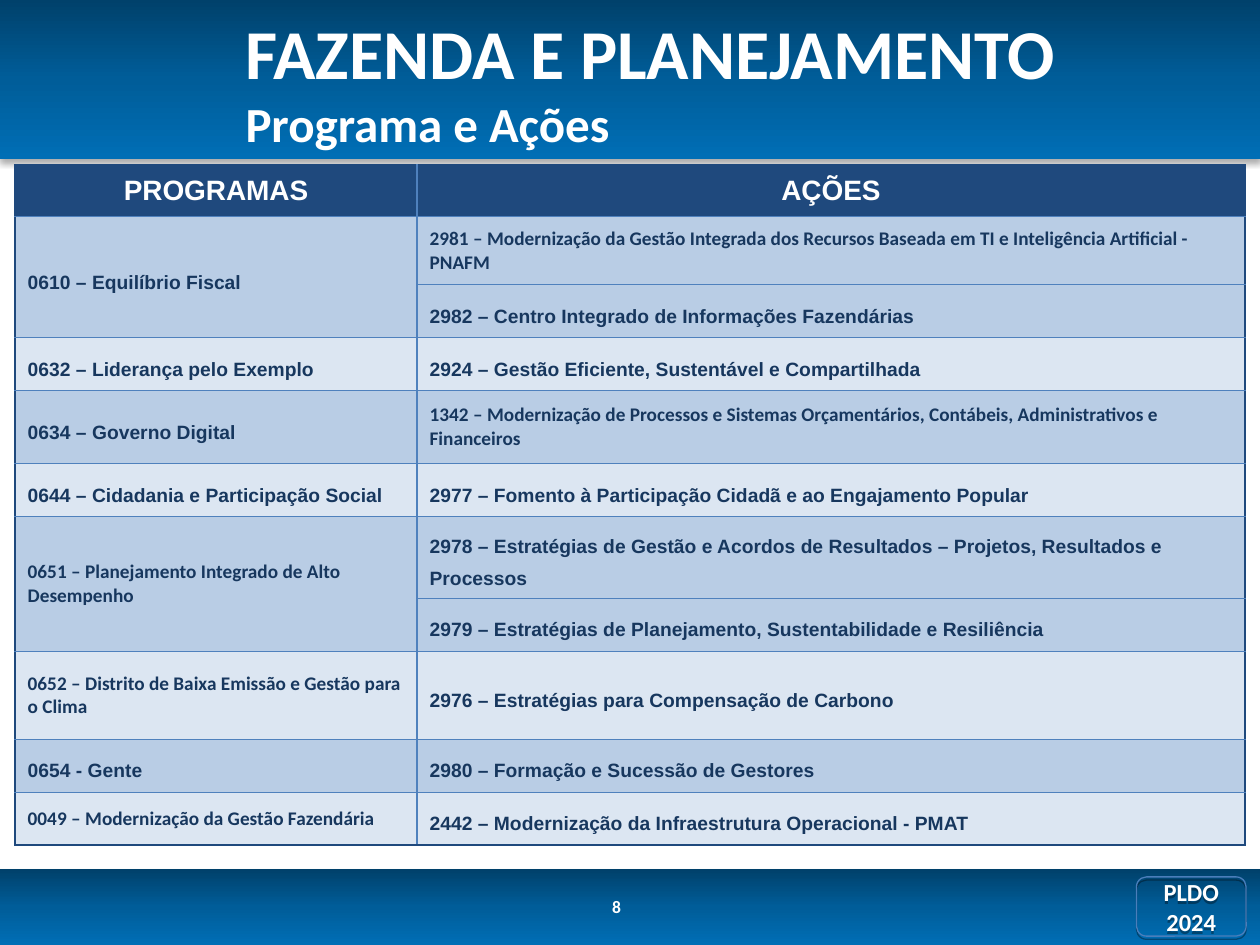
from dataclasses import dataclass

from pptx import Presentation
from pptx.dml.color import RGBColor
from pptx.enum.shapes import MSO_SHAPE as Preset
from pptx.enum.text import MSO_ANCHOR as Anchor, PP_ALIGN as Align
from pptx.oxml import parse_xml
from pptx.oxml.ns import nsdecls, qn
from pptx.util import Inches, Pt

NAVY, BLUE, INK, WHITE = "1F497D", "4F81BD", "17375E", "FFFFFF"
BANDS = ("B9CDE5", "DCE6F2")
BAND_GRADIENT = ((0, "00416B"), (50, "005D99"), (100, "006EB5"))
COLUMN_WIDTHS = (3.19, 6.57)
HEADER_HEIGHT = 0.41


@dataclass
class Entry:
    text: str
    compact: bool = False  # Calibri with single line spacing


@dataclass
class Action(Entry):
    height: float = 0.42


@dataclass
class Programme:
    title: Entry
    actions: tuple[Action, ...]


PROGRAMMES = (
    Programme(Entry("0610 – Equilíbrio Fiscal"), (
        Action("2981 – Modernização da Gestão Integrada dos Recursos Baseada em TI e "
               "Inteligência Artificial - PNAFM", True, 0.54),
        Action("2982 – Centro Integrado de Informações Fazendárias"))),
    Programme(Entry("0632 – Liderança pelo Exemplo"), (
        Action("2924 – Gestão Eficiente, Sustentável e Compartilhada"),)),
    Programme(Entry("0634 – Governo Digital"), (
        Action("1342 – Modernização de Processos e Sistemas Orçamentários, Contábeis, "
               "Administrativos e Financeiros", True, 0.58),)),
    Programme(Entry("0644 – Cidadania e Participação Social"), (
        Action("2977 – Fomento à Participação Cidadã e ao Engajamento Popular"),)),
    Programme(Entry("0651 – Planejamento Integrado de Alto Desempenho", True), (
        Action("2978 – Estratégias de Gestão e Acordos de Resultados – Projetos, "
               "Resultados e Processos"),
        Action("2979 – Estratégias de Planejamento, Sustentabilidade e Resiliência"))),
    Programme(Entry("0652 – Distrito de Baixa Emissão e Gestão para o Clima", True), (
        Action("2976 – Estratégias para Compensação de Carbono", height=0.7),)),
    Programme(Entry("0654 - Gente"), (
        Action("2980 – Formação e Sucessão de Gestores"),)),
    Programme(Entry("0049 – Modernização da Gestão Fazendária", True), (
        Action("2442 – Modernização da Infraestrutura Operacional - PMAT"),)),
)


def rgb(value: str) -> RGBColor:
    return RGBColor.from_string(value)


def style(paragraph, size: float, color: str = WHITE, font: str = "Calibri",
          align: Align = Align.LEFT) -> None:
    paragraph.alignment = align
    for run in paragraph.runs:
        run.font.name, run.font.size, run.font.bold = font, Pt(size), True
        run.font.color.rgb = rgb(color)


def add_shadow(shape, opacity: int, blur: float, distance: float) -> None:
    """Cast a black shadow straight down; call after fill and line are set."""
    shape.shadow.inherit = False
    shape._element.spPr.find(qn("a:effectLst")).append(parse_xml(
        f'<a:outerShdw {nsdecls("a")} blurRad="{Pt(blur)}" dist="{Pt(distance)}" '
        f'dir="5400000" rotWithShape="0"><a:srgbClr val="000000">'
        f'<a:alpha val="{opacity * 1000}"/></a:srgbClr></a:outerShdw>'))


def add_band(slide, top: float, height: float) -> None:
    band = slide.shapes.add_shape(Preset.RECTANGLE, 0, Inches(top), Inches(10), Inches(height))
    stops = "".join(f'<a:gs pos="{position * 1000}"><a:srgbClr val="{color}"/></a:gs>'
                    for position, color in BAND_GRADIENT)
    band.line.fill.background()
    properties = band._element.spPr
    properties.find(qn("a:prstGeom")).addnext(parse_xml(
        f'<a:gradFill {nsdecls("a")} rotWithShape="1"><a:gsLst>{stops}</a:gsLst>'
        f'<a:lin ang="5400000" scaled="0"/></a:gradFill>'))
    add_shadow(band, 32, 3.5, 2.2)


def add_text(slide, left: float, top: float, width: float, height: float,
             lines: tuple[tuple[str, float], ...], anchor: Anchor = Anchor.TOP) -> None:
    frame = slide.shapes.add_textbox(
        Inches(left), Inches(top), Inches(width), Inches(height)).text_frame
    frame.word_wrap, frame.vertical_anchor = True, anchor
    frame.text = "\n".join(text for text, _ in lines)
    for paragraph, (_, size) in zip(frame.paragraphs, lines):
        style(paragraph, size)


def add_badge(slide, text: str) -> None:
    badge = slide.shapes.add_shape(
        Preset.ROUNDED_RECTANGLE, Inches(9.02), Inches(6.96), Inches(0.87), Inches(0.47))
    badge.fill.background()
    badge.line.color.rgb, badge.line.width = rgb("4A7EBB"), Pt(0.75)
    add_shadow(badge, 35, 0, 1.8)
    frame = badge.text_frame
    frame.word_wrap, frame.vertical_anchor = True, Anchor.MIDDLE
    frame.text = text
    style(frame.paragraphs[0], 14, align=Align.CENTER)


def finish_cell(cell, fill: str, dark_sides: set[str]) -> None:
    """Set fill, margins and four borders, the outer ones in navy."""
    cell.vertical_anchor = Anchor.MIDDLE
    cell.margin_left = cell.margin_right = Inches(0.1)
    cell.margin_top = cell.margin_bottom = Inches(0.05)
    properties = cell._tc.get_or_add_tcPr()
    for side in "LRTB":
        properties.append(parse_xml(
            f'<a:ln{side} {nsdecls("a")} w="{Pt(1)}"><a:solidFill><a:srgbClr '
            f'val="{NAVY if side in dark_sides else BLUE}"/></a:solidFill></a:ln{side}>'))
    cell.fill.solid()
    cell.fill.fore_color.rgb = rgb(fill)


def write_entry(cell, entry: Entry, align: Align) -> None:
    cell.text = entry.text
    paragraph = cell.text_frame.paragraphs[0]
    if entry.compact:
        style(paragraph, 11, INK)
    else:
        paragraph.line_spacing = 1.5
        style(paragraph, 11, INK, "Arial", align)


def add_programme_table(slide) -> None:
    heights = [HEADER_HEIGHT] + [a.height for p in PROGRAMMES for a in p.actions]
    table = slide.shapes.add_table(
        len(heights), 2, Inches(0.12), Inches(1.31),
        Inches(sum(COLUMN_WIDTHS)), Inches(sum(heights))).table
    for column, width in zip(table.columns, COLUMN_WIDTHS):
        column.width = Inches(width)
    for row, height in zip(table.rows, heights):
        row.height = Inches(height)

    for column, heading in enumerate(("PROGRAMAS", "AÇÕES")):
        cell = table.cell(0, column)
        cell.text = heading
        style(cell.text_frame.paragraphs[0], 16, WHITE, "Arial", Align.CENTER)

    fills = [NAVY]
    for index, programme in enumerate(PROGRAMMES):
        first = len(fills)
        write_entry(table.cell(first, 0), programme.title, Align.JUSTIFY)
        for action in programme.actions:
            write_entry(table.cell(len(fills), 1), action, Align.LEFT)
            fills.append(BANDS[index % 2])
        if len(programme.actions) > 1:
            table.cell(first, 0).merge(table.cell(len(fills) - 1, 0))

    last = len(fills) - 1
    for row, fill in enumerate(fills):
        for column, outer_side in enumerate("LR"):
            dark_sides = {outer_side} | ({"T"} if row == 0 else set())
            if row == last:
                dark_sides.add("B")
            finish_cell(table.cell(row, column), fill, dark_sides)


def main() -> None:
    deck = Presentation()
    deck.slide_width, deck.slide_height = Inches(10), Inches(7.5)
    slide = deck.slides.add_slide(deck.slide_layouts[6])
    add_band(slide, 0, 1.26)
    add_band(slide, 6.9, 0.6)
    add_text(slide, 4.76, 7.06, 0.47, 0.24, (("8", 10),))
    add_badge(slide, "PLDO 2024")
    add_text(slide, 1.85, 0.05, 8.15, 1.18,
             (("FAZENDA E PLANEJAMENTO", 40), ("Programa e Ações", 28)), Anchor.MIDDLE)
    add_programme_table(slide)
    deck.save("out.pptx")


if __name__ == "__main__":
    main()
